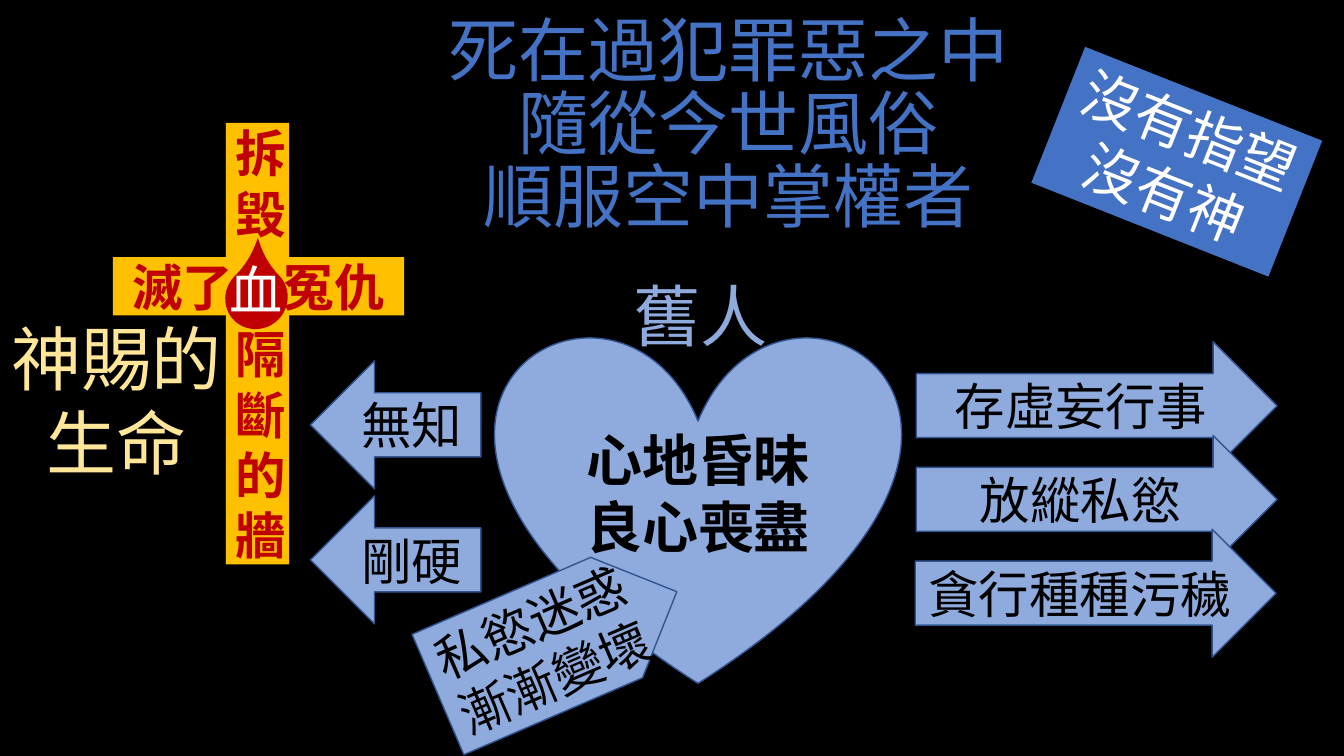
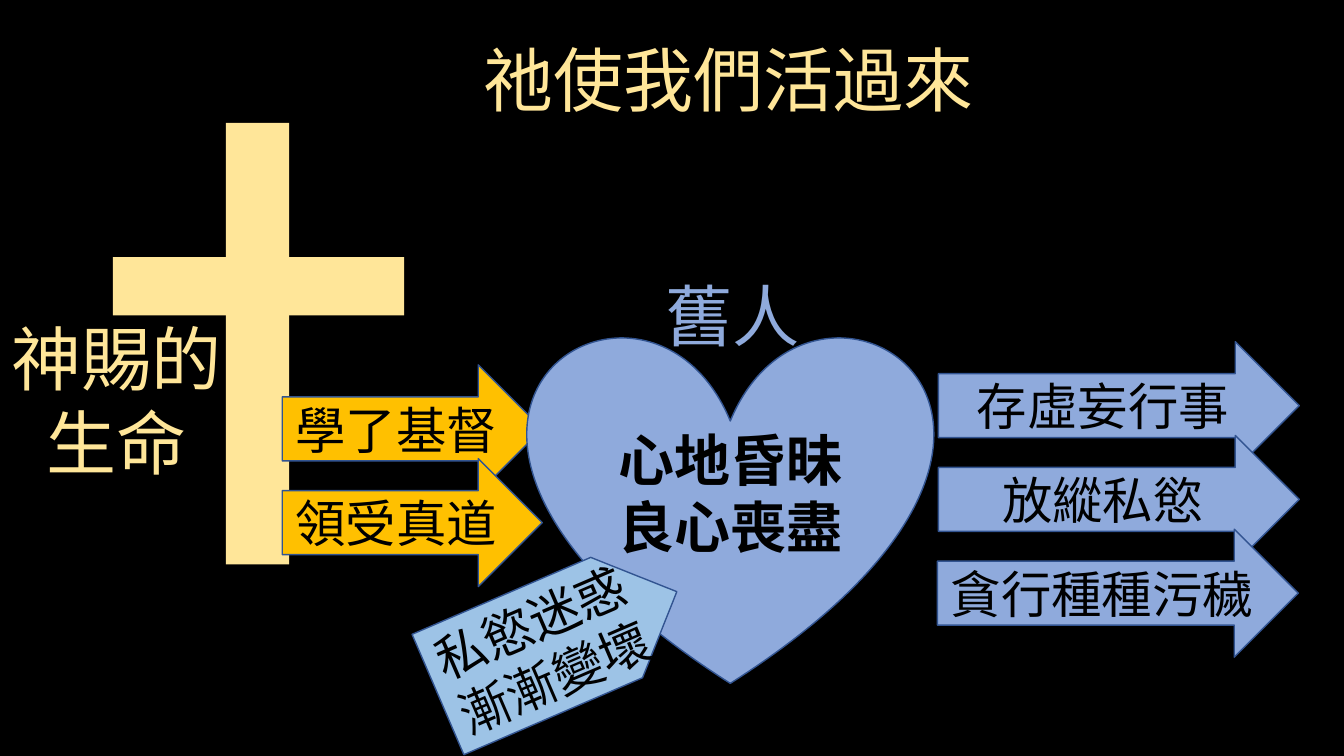
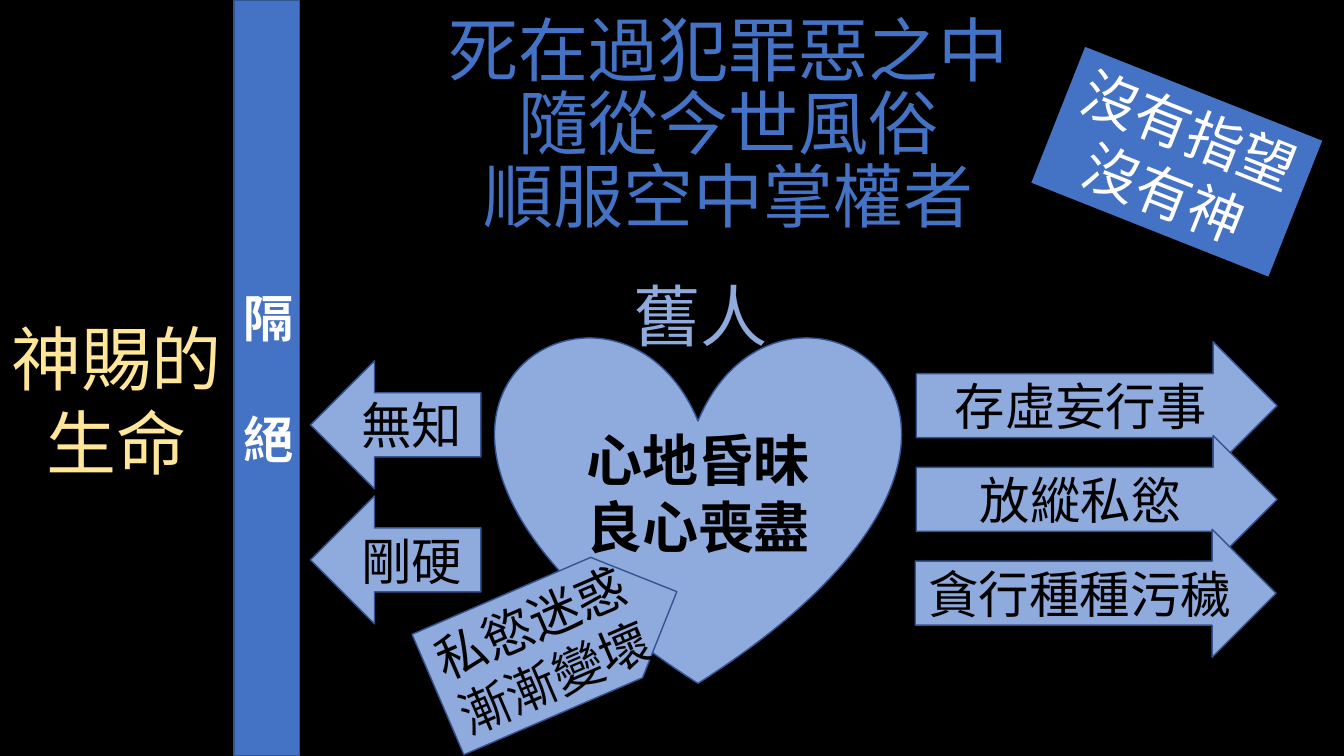
from pptx import Presentation, util as u
from pptx.dml.color import RGBColor
from pptx.enum import shapes, text

PX = 9144
FORM = shapes.MSO_SHAPE
BLACK, WHITE = "000000", "FFFFFF"
BLUE, PALE_BLUE, SKY, OUTLINE = "4472C4", "8FAADC", "9DC3E6", "325491"
GOLD, CREAM, RED = "FFC000", "FFE699", "C00000"


def rgb(value):
    return RGBColor.from_string(value)


def put(page, form, area, lines=(), fill=None, outline=None, turn=0, size=36, color=BLACK,
        font="Arial", bold=False, gap=0, anchor="MIDDLE", align="CENTER", wrap=True):
    place = [value * PX for value in area]
    if form is None:
        box = page.shapes.add_textbox(*place)
        anchor = "TOP"
    else:
        box = page.shapes.add_shape(form, *place)
        box.shadow.inherit = False
        box.fill.solid()
        box.fill.fore_color.rgb = rgb(fill)
        if outline:
            box.line.color.rgb = rgb(outline)
            box.line.width = u.Pt(1)
        else:
            box.line.fill.background()
    box.rotation = turn
    frame = box.text_frame
    frame.word_wrap = wrap
    frame.vertical_anchor = text.MSO_ANCHOR[anchor]
    for index, line in enumerate(lines):
        para = frame.paragraphs[0] if index == 0 else frame.add_paragraph()
        para.text = line
        para.alignment = text.PP_ALIGN[align]
        para.font.name = font
        para.font.size = u.Pt(size)
        para.font.bold = bold
        para.font.color.rgb = rgb(color)
        if gap and index == 1:
            para.space_before = u.Pt(gap)
    return box


deck = Presentation()
deck.slide_width, deck.slide_height = 12192000, 750 * PX

dead = ["死在過犯罪惡之中", "隨從今世風俗", "順服空中掌權者"]
alive = ["祂使我們活過來"]
scenes = [
    ("cross", dead, BLUE, 2, 0, PALE_BLUE),
    ("light", alive, CREAM, 31, 32, SKY),
    ("wall", dead, BLUE, 2, 0, PALE_BLUE),
]

for barrier, titles, title_color, title_top, heart_shift, plate_fill in scenes:
    page = deck.slides.add_slide(deck.slide_layouts[6])
    page.background.fill.solid()
    page.background.fill.fore_color.rgb = rgb(BLACK)

    for row, title in enumerate(titles):
        put(page, None, (383, title_top + row * 72, 680, 94), [title],
            size=50, color=title_color, font="Calibri")
    put(page, None, (-11, 308, 253, 178), ["神賜的生命"], size=50, color=CREAM)

    if barrier == "wall":
        put(page, FORM.RECTANGLE, (232, 0, 65, 750), ["隔", "絕"], BLUE, OUTLINE,
            color=WHITE, bold=True, gap=43)
    else:
        closed = barrier == "cross"
        cross_fill = GOLD if closed else CREAM
        post = ["拆毀", "隔", "斷的牆"] if closed else []
        beam = ["滅了　冤仇"] if closed else []
        put(page, FORM.RECTANGLE, (224, 122, 63, 438), post, cross_fill,
            color=RED, bold=True, gap=57)
        put(page, FORM.RECTANGLE, (112, 255, 289, 58), beam, cross_fill, color=RED, bold=True)
        if closed:
            drop = put(page, FORM.TEAR, (223, 265, 63, 61), fill=RED, turn=315.4)
            drop.adjustments[0] = 1.36
            put(page, None, (218, 250, 73, 74), ["血"], size=38, color=WHITE,
                align="LEFT", wrap=False)

    if barrier == "light":
        for row, word in enumerate(["學了基督", "領受真道"]):
            put(page, FORM.RIGHT_ARROW, (280, 362 + row * 93, 258, 127), [word], GOLD, OUTLINE)
    else:
        for row, word in enumerate(["無知", "剛硬"]):
            put(page, FORM.LEFT_ARROW, (308, 358 + row * 134, 169, 127), [word],
                PALE_BLUE, OUTLINE)
        put(page, FORM.RECTANGLE, (1041, 88, 253, 145), ["沒有指望沒有神"], BLUE,
            turn=21.6, size=40, color=WHITE, anchor="TOP")

    arrow_left = 931 if barrier == "light" else 909
    for row, word in enumerate(["存虛妄行事", "放縱私慾", "貪行種種污穢"]):
        put(page, FORM.RIGHT_ARROW, (arrow_left - row // 2, 339 + row * 93, 358, 127), [word],
            PALE_BLUE, OUTLINE)

    put(page, FORM.HEART, (492 + heart_shift, 331, 401, 347), fill=PALE_BLUE, outline=OUTLINE)
    put(page, None, (596 + heart_shift, 267, 198, 91), ["舊人"],
        size=48, color=PALE_BLUE, font="Roboto")
    put(page, None, (568 + heart_shift, 417, 249, 145), ["心地昏昧", "良心喪盡"],
        size=40, bold=True)
    put(page, FORM.PENTAGON, (424, 573, 258, 130), ["私慾迷惑", "漸漸變壞"],
        plate_fill, OUTLINE, turn=336.7)

deck.save("out.pptx")
